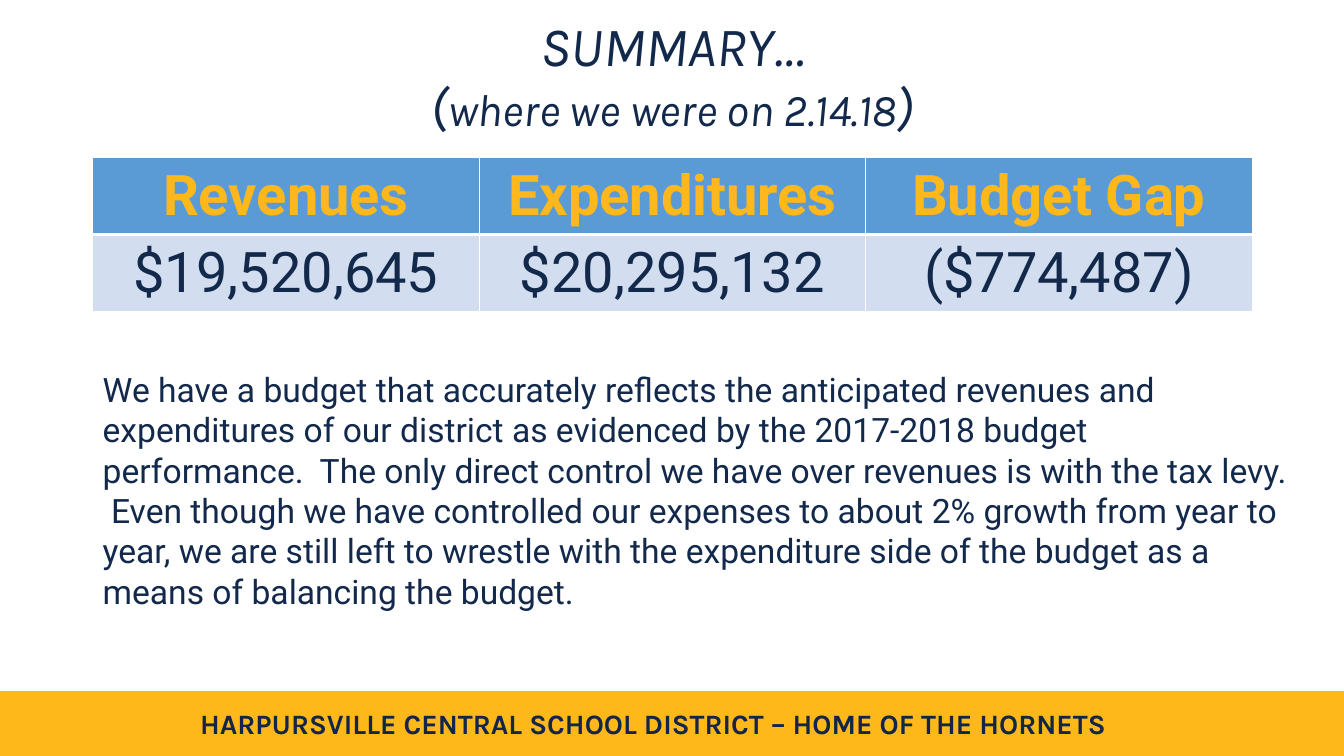
from lxml.etree import SubElement
from pptx import Presentation
from pptx.dml.color import RGBColor
from pptx.enum.shapes import MSO_SHAPE
from pptx.enum.text import MSO_ANCHOR, PP_ALIGN
from pptx.oxml.ns import qn
from pptx.util import Inches, Pt

NAVY = "13294B"
GOLD = "FFB81C"
WHITE = "FFFFFF"
BUDGET = [
    ["Revenues", "Expenditures", "Budget Gap"],
    ["$19,520,645", "$20,295,132", "($774,487)"],
]
MESSAGE = (
    "We have a budget that accurately reflects the anticipated revenues and "
    "expenditures of our district as evidenced by the 2017-2018 budget "
    "performance.  The only direct control we have over revenues is with the "
    "tax levy.  Even though we have controlled our expenses to about 2% growth "
    "from year to year, we are still left to wrestle with the expenditure side "
    "of the budget as a means of balancing the budget."
)


def color(value):
    return RGBColor.from_string(value)


def set_font(font, name, size, value, bold=False, italic=False):
    font.name = name
    font.size = Pt(size)
    font.color.rgb = color(value)
    font.bold = bold
    font.italic = italic


def add_text(page, left, top, width, height, text):
    box = page.shapes.add_textbox(
        Inches(left), Inches(top), Inches(width), Inches(height)
    )
    box.text_frame.word_wrap = True
    para = box.text_frame.paragraphs[0]
    para.text = text
    return para


def add_footer(page, left, top, width, height):
    band = page.shapes.add_shape(
        MSO_SHAPE.RECTANGLE, Inches(left), Inches(top), Inches(width), Inches(height)
    )
    band.shadow.inherit = False
    band.fill.solid()
    band.fill.fore_color.rgb = color("FFB819")
    band.line.color.rgb = color("FFB819")
    band.line.width = Pt(1)
    para = add_text(
        page, left + 1.76, top + 0.1, 9.44, 0.44,
        "HARPURSVILLE CENTRAL SCHOOL DISTRICT – HOME OF THE HORNETS",
    )
    para.alignment = PP_ALIGN.CENTER
    set_font(para.font, "Karla", 20, "132649", bold=True)


def add_title(page, left, top, width, height):
    title = page.shapes.title
    title.left, title.top = Inches(left), Inches(top)
    title.width, title.height = Inches(width), Inches(height)
    title.fill.solid()
    title.fill.fore_color.rgb = color(WHITE)
    title.text_frame.word_wrap = True
    title.text_frame.vertical_anchor = MSO_ANCHOR.MIDDLE
    para = title.text_frame.paragraphs[0]
    para.alignment = PP_ALIGN.CENTER
    para.line_spacing = 0.9
    set_font(para.font, "Karla", 39.6, NAVY, italic=True)
    para.add_run().text = "SUMMARY…"
    para.add_line_break()
    for text, size in (("(", 39.6), ("where we were on 2.14.18", 32.4), (")", 39.6)):
        span = para.add_run()
        span.text = text
        span.font.size = Pt(size)


def set_borders(cell, widths):
    properties = cell._tc.get_or_add_tcPr()
    for position, (side, width) in enumerate(widths.items()):
        line = properties.makeelement(qn(f"a:{side}"), {"w": str(Pt(width))})
        fill = SubElement(line, qn("a:solidFill"))
        SubElement(fill, qn("a:srgbClr"), val=WHITE)
        properties.insert(position, line)


def add_budget_table(page, left, top, width, height):
    rows, columns = len(BUDGET), len(BUDGET[0])
    table = page.shapes.add_table(
        rows, columns, Inches(left), Inches(top), Inches(width), Inches(height)
    ).table
    for row, values in enumerate(BUDGET):
        header = row == 0
        for column, value in enumerate(values):
            cell = table.cell(row, column)
            cell.fill.solid()
            cell.fill.fore_color.rgb = color("5B9BD5" if header else "D2DEEF")
            cell.vertical_anchor = MSO_ANCHOR.MIDDLE
            para = cell.text_frame.paragraphs[0]
            para.text = value
            para.alignment = PP_ALIGN.CENTER
            set_font(para.font, "Roboto", 40, GOLD if header else NAVY, bold=header)
            set_borders(cell, {
                "lnL": 1, "lnR": 1,
                "lnT": 1 if header else 3, "lnB": 3 if header else 1,
            })


def add_message(page, left, top, width, height):
    para = add_text(page, left, top, width, height, MESSAGE)
    set_font(para.font, "Roboto", 24, NAVY)


def main():
    deck = Presentation()
    deck.slide_width = Inches(13.33)
    deck.slide_height = Inches(7.5)
    page = deck.slides.add_slide(deck.slide_layouts[5])
    page.background.fill.solid()
    page.background.fill.fore_color.rgb = color(WHITE)
    add_footer(page, 0, 6.86, 13.33, 0.63)
    add_title(page, 0.92, 0.26, 11.5, 1.04)
    add_budget_table(page, 0.92, 1.56, 11.5, 1.5)
    add_message(page, 0.92, 3.61, 12.02, 2.52)
    deck.save("out.pptx")


if __name__ == "__main__":
    main()
